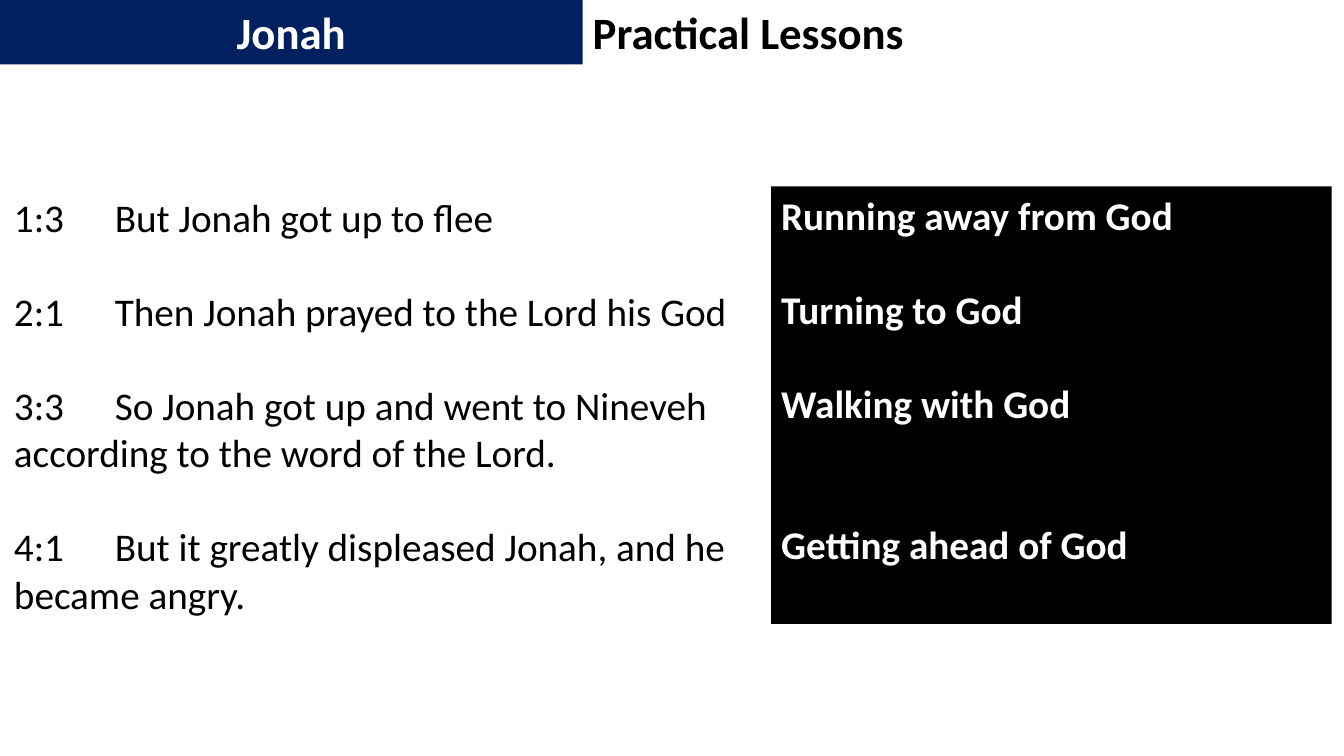
from lxml.etree import SubElement
from pptx import Presentation
from pptx.dml.color import RGBColor as RGB
from pptx.enum.shapes import MSO_SHAPE as SHAPE
from pptx.enum.text import MSO_ANCHOR as ANCHOR, MSO_AUTO_SIZE as AUTO, PP_ALIGN as ALIGN
from pptx.oxml.ns import qn
from pptx.util import Inches, Pt

COLORS = {"navy": "002060", "black": "000000", "white": "FFFFFF"}
FONT = "Calibri"
HEAD, BODY = 32, 28
LINE = 33.6  # height of one body line in points


def write(sp, paragraphs, size=BODY, color="black", bold=False,
          align=ALIGN.LEFT, gaps=None, tab=None):
    """Fill a shape with paragraphs; gaps are lines left free above each."""
    tf = sp.text_frame
    tf.word_wrap = True
    tf.auto_size = AUTO.NONE
    tf.vertical_anchor = ANCHOR.TOP
    for i, text in enumerate(paragraphs):
        p = tf.paragraphs[0] if i == 0 else tf.add_paragraph()
        p.alignment = align
        p.space_before = Pt(LINE * gaps[i] if gaps else 0)
        if tab:
            stops = SubElement(p._p.get_or_add_pPr(), qn("a:tabLst"))
            SubElement(stops, qn("a:tab"), pos=str(tab), algn="l")
        r = p.add_run()
        r.text = text
        r.font.name, r.font.size, r.font.bold = FONT, Pt(size), bold
        r.font.color.rgb = RGB.from_string(COLORS[color])


class Deck:
    """Holds the presentation and its slide; boxes are in percent of the slide."""

    def __init__(self):
        self.prs = Presentation()
        self.prs.slide_width, self.prs.slide_height = Inches(13.33), Inches(7.5)
        self.slide = self.prs.slides.add_slide(self.prs.slide_layouts[5])

    def box(self, x, y, w, h):
        sw, sh = self.prs.slide_width, self.prs.slide_height
        return [int(v * s / 100) for v, s in ((x, sw), (y, sh), (w, sw), (h, sh))]

    def fill(self, sp, color):
        sp.fill.solid()
        sp.fill.fore_color.rgb = RGB.from_string(COLORS[color])

    def title(self, text, box, **fmt):
        sp = self.slide.shapes.title
        sp.left, sp.top, sp.width, sp.height = self.box(*box)
        self.fill(sp, "white")
        write(sp, [text], **fmt)

    def panel(self, paragraphs, box, fill, **fmt):
        sp = self.slide.shapes.add_shape(SHAPE.RECTANGLE, *self.box(*box))
        sp.shadow.inherit = False
        sp.line.fill.background()
        self.fill(sp, fill)
        write(sp, paragraphs, **fmt)

    def text(self, paragraphs, box, **fmt):
        write(self.slide.shapes.add_textbox(*self.box(*box)), paragraphs, **fmt)


def main():
    deck = Deck()

    # Header: book name and title
    split, header_h = 43.35, 8.53
    deck.title("Practical Lessons", (split, 0, 33.83, header_h), size=HEAD, bold=True)
    deck.panel(["Jonah"], (0, 0, split, header_h), "navy",
               size=HEAD, color="white", bold=True, align=ALIGN.CENTER)

    # Verses
    body_h = 57.87
    verses = [
        ("1:3", "But Jonah got up to flee"),
        ("2:1", "Then Jonah prayed to the Lord his God"),
        ("3:3", "So Jonah got up and went to Nineveh according to the word of the Lord."),
        ("4:1", "But it greatly displeased Jonah, and he became angry."),
    ]
    deck.text(["\t".join(v) for v in verses], (0.3, 24.93, 61.73, body_h),
              gaps=(0, 1, 1, 1), tab=Inches(1))

    # Lessons, each level with its verse
    deck.panel(["Running away from God", "Turning to God", "Walking with God",
                "Getting ahead of God"],
               (57.38, 24.67, 41.7, body_h), "black",
               color="white", bold=True, gaps=(0, 1, 1, 2))

    deck.prs.save("out.pptx")


if __name__ == "__main__":
    main()
